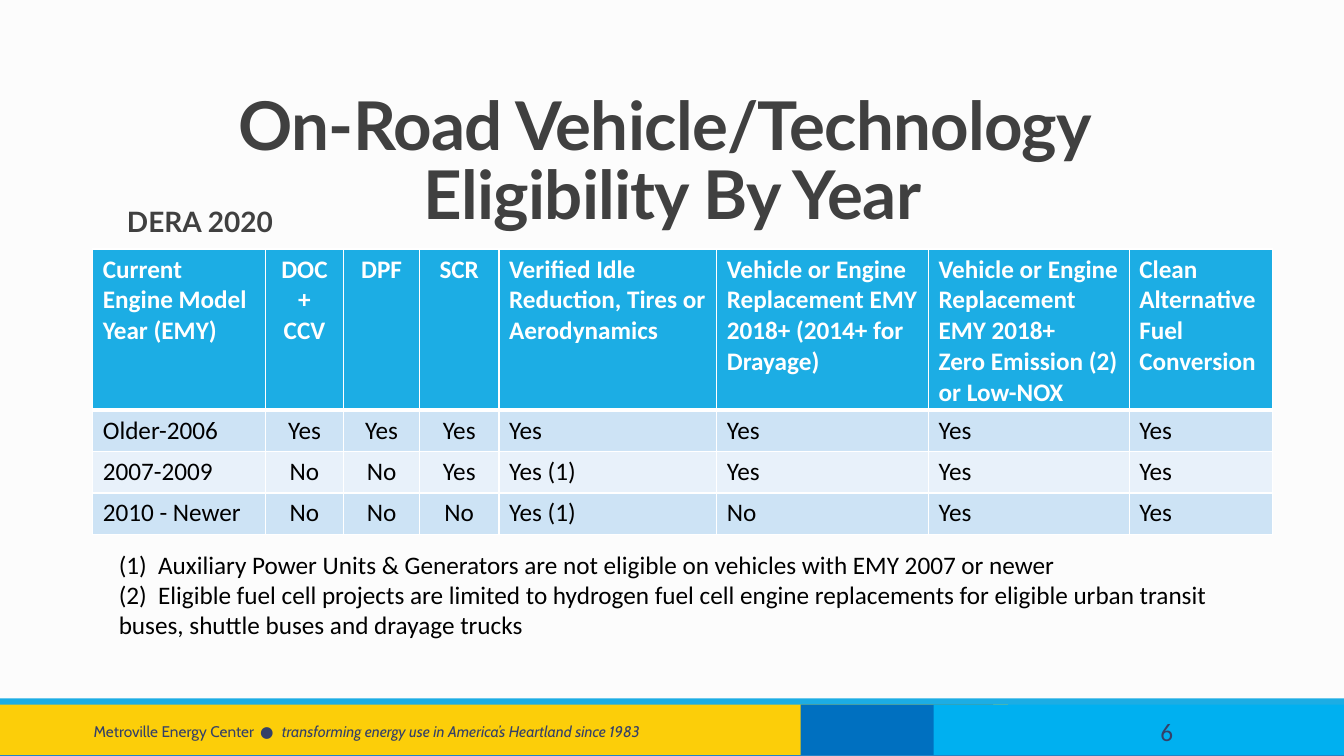
from lxml import etree
from pptx import Presentation
from pptx.dml.color import RGBColor
from pptx.enum.shapes import MSO_SHAPE
from pptx.enum.text import MSO_ANCHOR, PP_ALIGN
from pptx.oxml.ns import qn
from pptx.util import Emu, Pt

RECT = MSO_SHAPE.RECTANGLE
TOP, MIDDLE, BOTTOM = MSO_ANCHOR.TOP, MSO_ANCHOR.MIDDLE, MSO_ANCHOR.BOTTOM
LEFT, CENTER, JUSTIFY = PP_ALIGN.LEFT, PP_ALIGN.CENTER, PP_ALIGN.JUSTIFY

PAPER = RGBColor(0xFC, 0xFC, 0xFC)
WHITE = RGBColor(0xFF, 0xFF, 0xFF)
BLACK = RGBColor(0x00, 0x00, 0x00)
CHARCOAL = RGBColor(0x40, 0x40, 0x40)
NAVY = RGBColor(0x34, 0x40, 0x68)
SKY = RGBColor(0x1C, 0xAD, 0xE4)
STEEL = RGBColor(0x26, 0x83, 0xC6)
YELLOW = RGBColor(0xFC, 0xCE, 0x09)
BLUE = RGBColor(0x00, 0x70, 0xC0)
CYAN = RGBColor(0x00, 0xB0, 0xF0)
BAND_DARK = RGBColor(0xCD, 0xE3, 0xF5)
BAND_LIGHT = RGBColor(0xE8, 0xF1, 0xFA)

BARS = [
    (0, 700, 1333, 50, STEEL),
    (0, 693, 1333, 7, SKY),
    (0, 699, 1000, 50, YELLOW),
    (794, 699, 191, 50, BLUE),
    (926, 699, 407, 50, CYAN),
]
COLUMN_WIDTHS = [171, 78, 75, 79, 216, 210, 199, 142]
ROW_HEIGHTS = [159, 41, 41, 41]
COLUMN_ALIGNS = [LEFT, CENTER, CENTER, CENTER, LEFT, LEFT, LEFT, LEFT]
ELIGIBILITY = [
    ["Current Engine Model Year (EMY)", "DOC + CCV", "DPF", "SCR",
     "Verified Idle Reduction, Tires or Aerodynamics",
     "Vehicle or Engine Replacement EMY 2018+ (2014+ for Drayage)",
     "Vehicle or Engine Replacement EMY 2018+\nZero Emission (2) or Low-NOX",
     "Clean Alternative Fuel Conversion"],
    ["Older-2006"] + ["Yes"] * 7,
    ["2007-2009", "No", "No", "Yes", "Yes (1)", "Yes", "Yes", "Yes"],
    ["2010 - Newer", "No", "No", "No", "Yes (1)", "No", "Yes", "Yes"],
]
FOOTNOTES = (
    "(1)\tAuxiliary Power Units & Generators are not eligible on vehicles "
    "with EMY 2007 or newer\n"
    "(2)\tEligible fuel cell projects are limited to hydrogen fuel cell engine "
    "replacements for eligible urban transit buses, shuttle buses and drayage trucks"
)


def px(n):
    return Emu(n * 9144)


class Deck:
    font, size, color = "Calibri", 18, BLACK

    def __init__(self, width, height):
        self.prs = Presentation()
        self.prs.slide_width, self.prs.slide_height = px(width), px(height)
        self.s = self.prs.slides.add_slide(self.prs.slide_layouts[6])
        self.s.background.fill.solid()
        self.s.background.fill.fore_color.rgb = PAPER

    def bar(self, x, y, w, h, color):
        sp = self.s.shapes.add_shape(RECT, px(x), px(y), px(w), px(h))
        sp.shadow.inherit = False
        sp.fill.solid()
        sp.fill.fore_color.rgb = color
        sp.line.fill.background()

    def style(self, tf, font=None, size=None, color=None, bold=False, align=LEFT,
              line_spacing=None):
        for p in tf.paragraphs:
            p.alignment = align
            p.line_spacing = line_spacing
            for r in p.runs:
                r.font.name = font or self.font
                r.font.size = Pt(size or self.size)
                r.font.bold = bold
                r.font.color.rgb = color or self.color

    def text(self, x, y, w, h, text, anchor=TOP, margin=10, **style):
        sp = self.s.shapes.add_textbox(px(x), px(y), px(w), px(h))
        tf = sp.text_frame
        tf.word_wrap = True
        tf.vertical_anchor = anchor
        tf.margin_left = tf.margin_right = px(margin)
        tf.text = text
        self.style(tf, **style)
        return tf

    def track(self, r, spacing):
        r.font._element.set("spc", str(spacing))

    def tab_stop(self, tf, pos):
        for p in tf.paragraphs:
            tabs = etree.SubElement(p._p.get_or_add_pPr(), qn("a:tabLst"))
            etree.SubElement(tabs, qn("a:tab"), pos=str(px(pos)), algn="l")

    def border(self, cell, side, points):
        ln = etree.SubElement(cell._tc.get_or_add_tcPr(), qn(f"a:ln{side}"),
                              w=str(Pt(points)))
        fill = etree.SubElement(ln, qn("a:solidFill"))
        etree.SubElement(fill, qn("a:srgbClr"), val=str(WHITE))

    def table(self, x, y, rows, widths, heights, aligns):
        table = self.s.shapes.add_table(len(rows), len(widths), px(x), px(y),
                                        px(sum(widths)), px(sum(heights))).table
        table.first_row = table.horz_banding = False
        for column, width in zip(table.columns, widths):
            column.width = px(width)
        for i, values in enumerate(rows):
            table.rows[i].height = px(heights[i])
            header = i == 0
            fill = SKY if header else BAND_DARK if i % 2 else BAND_LIGHT
            for j, value in enumerate(values):
                cell = table.cell(i, j)
                cell.text = value
                self.style(cell.text_frame, color=WHITE if header else BLACK,
                           bold=header, align=aligns[j])
                for side in "LRTB":
                    thick = (i, side) in ((0, "B"), (1, "T"))
                    self.border(cell, side, 3 if thick else 1)
                cell.fill.solid()
                cell.fill.fore_color.rgb = fill


def main():
    deck = Deck(1333, 750)
    for bar in BARS:
        deck.bar(*bar)

    footer = deck.text(83, 706, 633, 40, "", anchor=MIDDLE)
    p = footer.paragraphs[0]
    for part in ("Metroville Energy Center", " ● ",
                 "transforming energy use in America’s Heartland since 1983"):
        p.add_run().text = part
    deck.style(footer, font="Cabin", size=11, color=NAVY)
    deck.track(p.runs[1], 170)
    p.runs[2].font.italic = True
    deck.text(1141, 706, 160, 40, "6", anchor=MIDDLE, color=NAVY)

    title = deck.text(92, 40, 1150, 196,
                      "On-Road Vehicle/Technology \vEligibility By Year",
                      anchor=BOTTOM, font="Lato", size=48, color=CHARCOAL,
                      bold=True, align=CENTER, line_spacing=0.85)
    for r in title.paragraphs[0].runs:
        deck.track(r, -50)
    deck.text(126, 202, 1094, 440, "DERA 2020", margin=0, font="Lato", size=20,
              color=CHARCOAL, bold=True, align=JUSTIFY, line_spacing=0.9)

    deck.table(92, 247, ELIGIBILITY, COLUMN_WIDTHS, ROW_HEIGHTS, COLUMN_ALIGNS)
    notes = deck.text(108, 540, 1143, 101, FOOTNOTES)
    deck.tab_stop(notes, 39)
    deck.prs.save("out.pptx")


if __name__ == "__main__":
    main()
